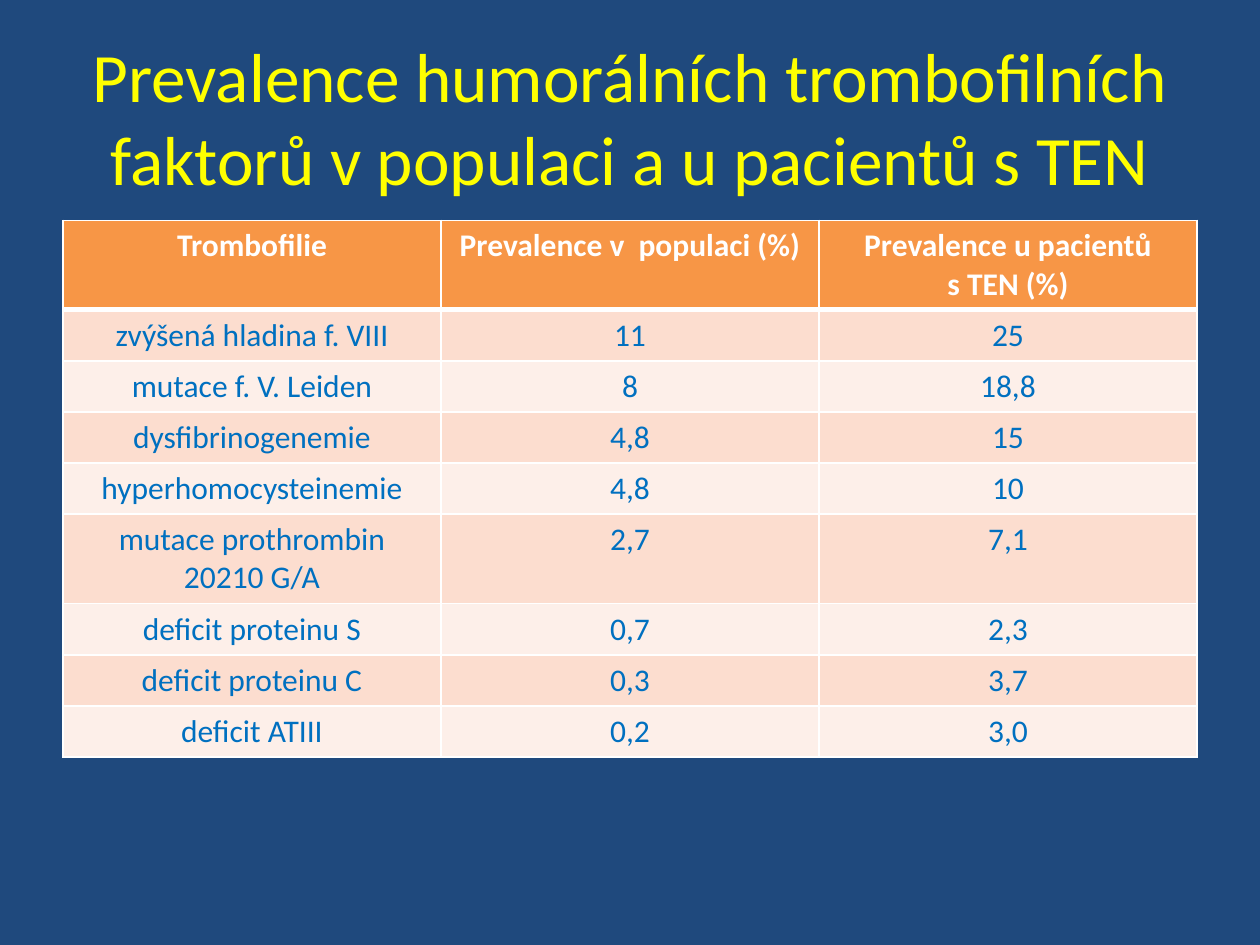
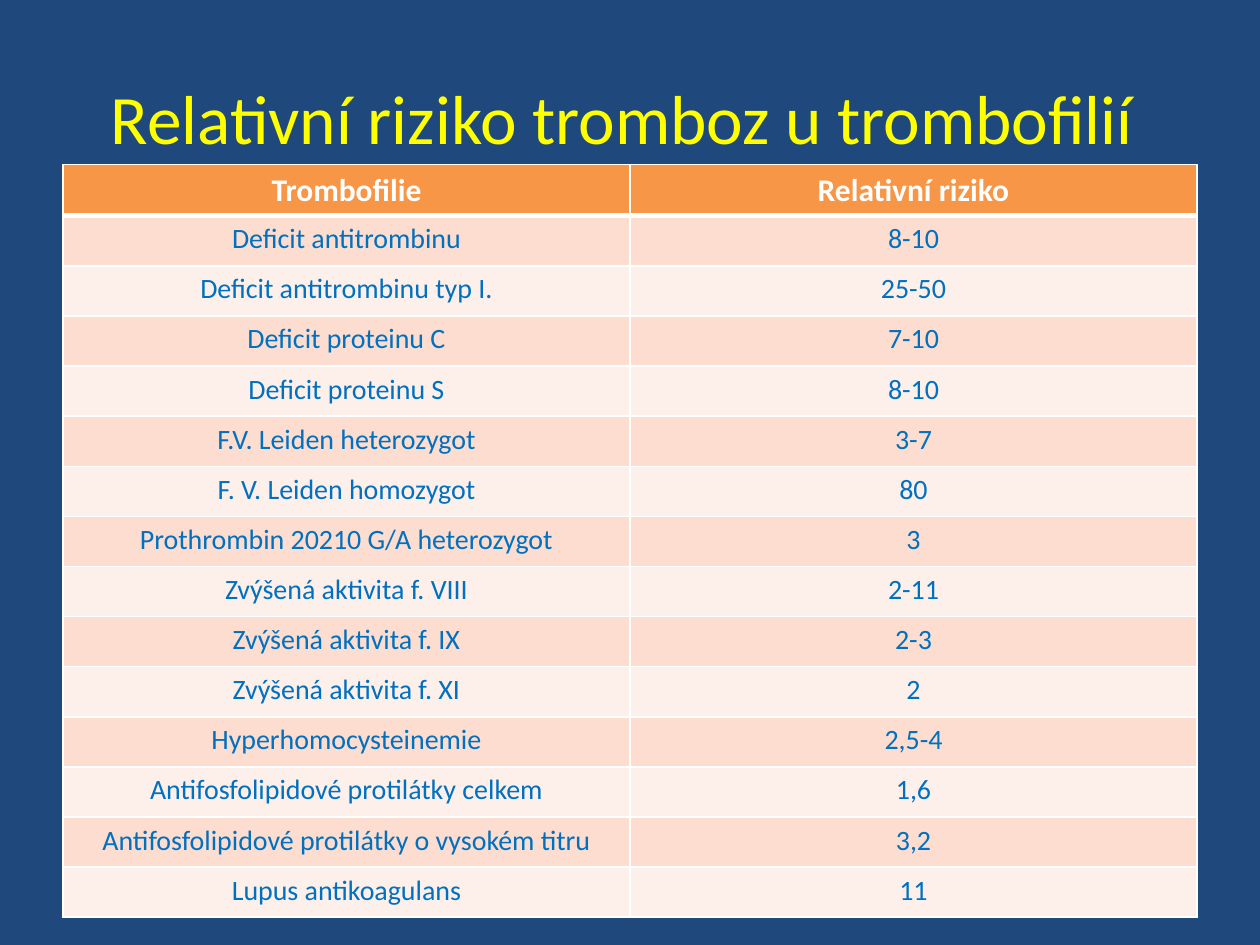
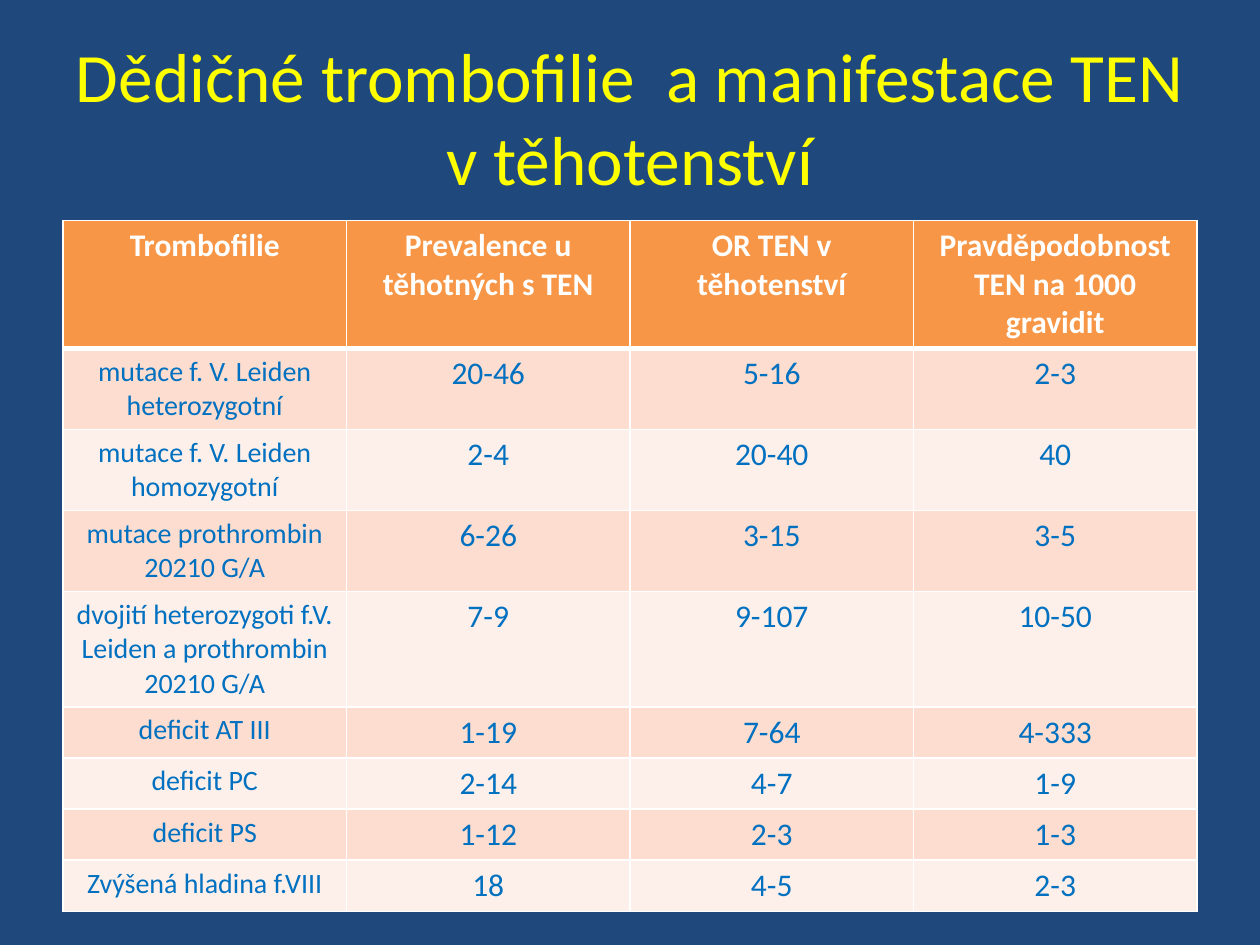
from dataclasses import dataclass

from lxml import etree
from pptx import Presentation
from pptx import util as u
from pptx.dml.color import RGBColor
from pptx.enum import text
from pptx.oxml import ns

SLIDES = [
    {
        "title": "Prevalence humorálních trombofilních faktorů v populaci a u pacientů s TEN",
        "top": 4.44, "row_height": 1.03, "label_size": 18, "value_size": 18,
        "rows": [
            ("Trombofilie", "Prevalence v  populaci (%)", "Prevalence u pacientů\ns TEN (%)"),
            ("zvýšená hladina f. VIII", "11", "25"),
            ("mutace f. V. Leiden", "8", "18,8"),
            ("dysfibrinogenemie", "4,8", "15"),
            ("hyperhomocysteinemie", "4,8", "10"),
            ("mutace prothrombin 20210 G/A", "2,7", "7,1"),
            ("deficit proteinu S", "0,7", "2,3"),
            ("deficit proteinu C", "0,3", "3,7"),
            ("deficit ATIII", "0,2", "3,0"),
        ],
    },
    {
        "title": "Relativní riziko tromboz u trombofilií ",
        "top": 3.32, "row_height": 1.01, "label_size": 16, "value_size": 16,
        "rows": [
            ("Trombofilie", "Relativní riziko"),
            ("Deficit antitrombinu", "8-10"),
            ("Deficit antitrombinu typ I.", "25-50"),
            ("Deficit proteinu C", "7-10"),
            ("Deficit proteinu S", "8-10"),
            ("F.V. Leiden heterozygot", "3-7"),
            ("F. V. Leiden homozygot", "80"),
            ("Prothrombin 20210 G/A heterozygot", "3"),
            ("Zvýšená aktivita f. VIII", "2-11"),
            ("Zvýšená aktivita f. IX", "2-3"),
            ("Zvýšená aktivita f. XI", "2"),
            ("Hyperhomocysteinemie", "2,5-4"),
            ("Antifosfolipidové protilátky celkem", "1,6"),
            ("Antifosfolipidové protilátky o vysokém titru", "3,2"),
            ("Lupus antikoagulans", "11"),
        ],
    },
    {
        "title": "Dědičné trombofilie  a manifestace TEN v těhotenství",
        "top": 4.44, "row_height": 1.03, "label_size": 16, "value_size": 18,
        "rows": [
            ("Trombofilie", "Prevalence u těhotných s TEN", "OR TEN v těhotenství",
             "Pravděpodobnost TEN na 1000 gravidit"),
            ("mutace f. V. Leiden heterozygotní", "20-46", "5-16", "2-3"),
            ("mutace f. V. Leiden homozygotní", "2-4", "20-40", "40"),
            ("mutace prothrombin 20210 G/A", "6-26", "3-15", "3-5"),
            ("dvojití heterozygoti f.V. Leiden a prothrombin 20210 G/A", "7-9", "9-107", "10-50"),
            ("deficit AT III", "1-19", "7-64", "4-333"),
            ("deficit PC", "2-14", "4-7", "1-9"),
            ("deficit PS", "1-12", "2-3", "1-3"),
            ("Zvýšená hladina f.VIII", "18", "4-5", "2-3"),
        ],
    },
]


@dataclass(frozen=True)
class Theme:
    font: str = "Calibri"
    background: str = "1F497D"
    title: str = "FFFF00"
    header_fill: str = "F79646"
    header_text: str = "FFFFFF"
    body_text: str = "0070C0"
    bands: tuple = ("FCDDCF", "FDEFE9")
    border: str = "FFFFFF"
    title_size: float = 39.6
    header_size: int = 18
    thin: int = 1
    thick: int = 3


THEME = Theme()
LEFT, WIDTH = u.Cm(1.27), u.Cm(22.86)
TITLE_TOP, TITLE_HEIGHT = u.Cm(0.76), u.Cm(3.18)


def paint(fill, color):
    fill.solid()
    fill.fore_color.rgb = RGBColor.from_string(color)


def style_text(frame, size, color, bold=False):
    for para in frame.paragraphs:
        para.alignment = text.PP_ALIGN.CENTER
        para.font.name = THEME.font
        para.font.size = u.Pt(size)
        para.font.bold = bold
        para.font.color.rgb = RGBColor.from_string(color)


def add_borders(cell, top, bottom):
    """Draw all four cell edges; must run before the cell is filled."""
    properties = cell._tc.get_or_add_tcPr()
    edges = {"lnL": THEME.thin, "lnR": THEME.thin, "lnT": top, "lnB": bottom}
    for edge, points in edges.items():
        line = etree.SubElement(properties, ns.qn(f"a:{edge}"), w=str(u.Pt(points)))
        solid = etree.SubElement(line, ns.qn("a:solidFill"))
        etree.SubElement(solid, ns.qn("a:srgbClr"), val=THEME.border)


def style_cell(cell, row, column, content):
    if row == 0:
        add_borders(cell, THEME.thin, THEME.thick)
        paint(cell.fill, THEME.header_fill)
        style_text(cell.text_frame, THEME.header_size, THEME.header_text, bold=True)
    else:
        add_borders(cell, THEME.thick if row == 1 else THEME.thin, THEME.thin)
        paint(cell.fill, THEME.bands[(row - 1) % 2])
        size = content["label_size"] if column == 0 else content["value_size"]
        style_text(cell.text_frame, size, THEME.body_text)


def add_data_table(page, content):
    rows = content["rows"]
    row_height = u.Cm(content["row_height"])
    table = page.shapes.add_table(len(rows), len(rows[0]), LEFT, u.Cm(content["top"]),
                                  WIDTH, row_height * len(rows)).table
    for row, values in enumerate(rows):
        table.rows[row].height = row_height
        for column, value in enumerate(values):
            cell = table.cell(row, column)
            cell.text = value
            style_cell(cell, row, column, content)


def add_page(deck, layout, content):
    page = deck.slides.add_slide(layout)
    frame = page.shapes.title.text_frame
    frame.text = content["title"]
    frame.auto_size = text.MSO_AUTO_SIZE.NONE
    frame.vertical_anchor = text.MSO_ANCHOR.MIDDLE
    style_text(frame, THEME.title_size, THEME.title)
    add_data_table(page, content)


def main():
    deck = Presentation()
    deck.slide_width, deck.slide_height = u.Cm(25.4), u.Cm(19.05)
    paint(deck.slide_master.background.fill, THEME.background)
    layout = deck.slide_layouts.get_by_name("Title Only")
    title = layout.placeholders[0]
    title.left, title.top, title.width, title.height = LEFT, TITLE_TOP, WIDTH, TITLE_HEIGHT
    for content in SLIDES:
        add_page(deck, layout, content)
    deck.save("out.pptx")


if __name__ == "__main__":
    main()
